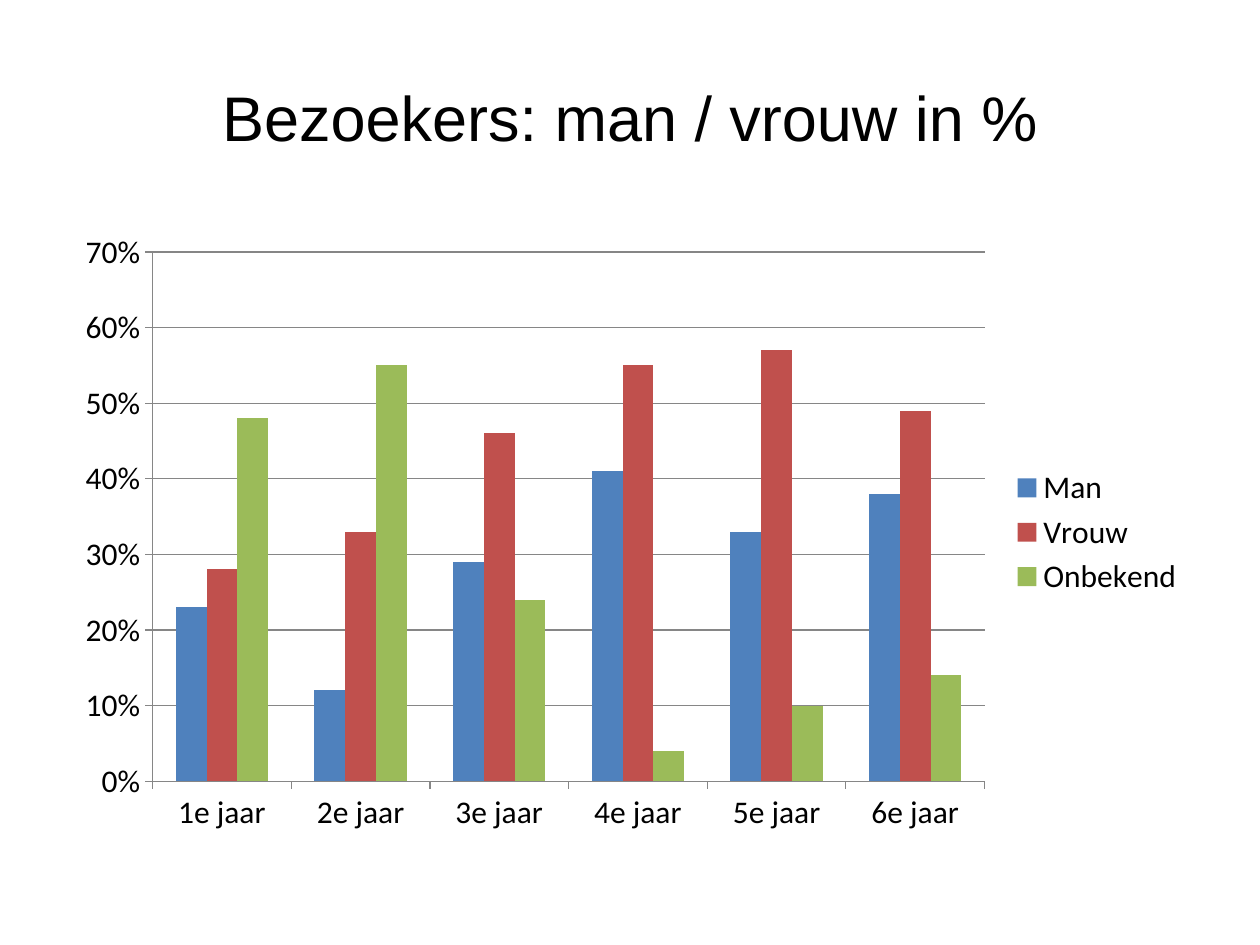
from pptx import Presentation
from pptx import util as u
from pptx.chart.data import CategoryChartData
from pptx.dml.color import RGBColor
from pptx.enum import chart as charts, text

TITLE = "Bezoekers: man / vrouw in %"
YEARS = [f"{number}e jaar" for number in range(1, 7)]
VISITORS = {
    "Man": (0.23, 0.12, 0.29, 0.41, 0.33, 0.38),
    "Vrouw": (0.28, 0.33, 0.46, 0.55, 0.57, 0.49),
    "Onbekend": (0.48, 0.55, 0.24, 0.04, 0.10, 0.14),
}
COLORS = {
    "Man": "4F81BD",
    "Vrouw": "C0504D",
    "Onbekend": "9BBB59",
    "text": "000000",
    "line": "868686",
}
LEFT, WIDTH = u.Inches(0.5), u.Inches(9)


def color(name):
    return RGBColor.from_string(COLORS[name])


def style_font(font, name, size):
    font.name = name
    font.size = u.Pt(size)
    font.bold = False
    font.color.rgb = color("text")


def style_line(line):
    line.color.rgb = color("line")
    line.width = u.Pt(0.75)


def add_title(slide):
    title = slide.shapes.title
    title.left, title.top = LEFT, u.Inches(0.3)
    title.width, title.height = WIDTH, u.Inches(1.25)
    frame = title.text_frame
    frame.text = TITLE
    frame.vertical_anchor = text.MSO_ANCHOR.MIDDLE
    paragraph = frame.paragraphs[0]
    paragraph.alignment = text.PP_ALIGN.CENTER
    style_font(paragraph.font, "Arial", 36)


def add_visitor_chart(slide):
    data = CategoryChartData(number_format="0%")
    data.categories = YEARS
    for name, values in VISITORS.items():
        data.add_series(name, values)
    chart = slide.shapes.add_chart(
        charts.XL_CHART_TYPE.COLUMN_CLUSTERED,
        LEFT, u.Inches(1.75), WIDTH, u.Inches(4.95), data,
    ).chart
    style_font(chart.font, "Calibri", 18)
    chart.has_title = False
    chart.has_legend = True
    chart.legend.position = charts.XL_LEGEND_POSITION.RIGHT
    chart.legend.include_in_layout = False

    for axis in (chart.category_axis, chart.value_axis):
        axis.major_tick_mark = charts.XL_TICK_MARK.OUTSIDE
        axis.minor_tick_mark = charts.XL_TICK_MARK.NONE
        style_line(axis.format.line)
    value_axis = chart.value_axis
    value_axis.minimum_scale, value_axis.maximum_scale = 0, 0.7
    value_axis.major_unit = 0.1
    value_axis.has_major_gridlines = True
    style_line(value_axis.major_gridlines.format.line)
    value_axis.tick_labels.number_format = "0%"
    value_axis.tick_labels.number_format_is_linked = False

    plot = chart.plots[0]
    plot.gap_width = 150
    plot.overlap = 0
    plot.vary_by_categories = False
    for series in plot.series:
        series.format.fill.solid()
        series.format.fill.fore_color.rgb = color(series.name)


def main():
    """Build the slide with yearly visitor shares by gender."""
    presentation = Presentation()
    presentation.slide_width = u.Inches(10)
    presentation.slide_height = u.Inches(7.5)
    slide = presentation.slides.add_slide(presentation.slide_layouts[5])
    add_title(slide)
    add_visitor_chart(slide)
    presentation.save("out.pptx")


if __name__ == "__main__":
    main()
